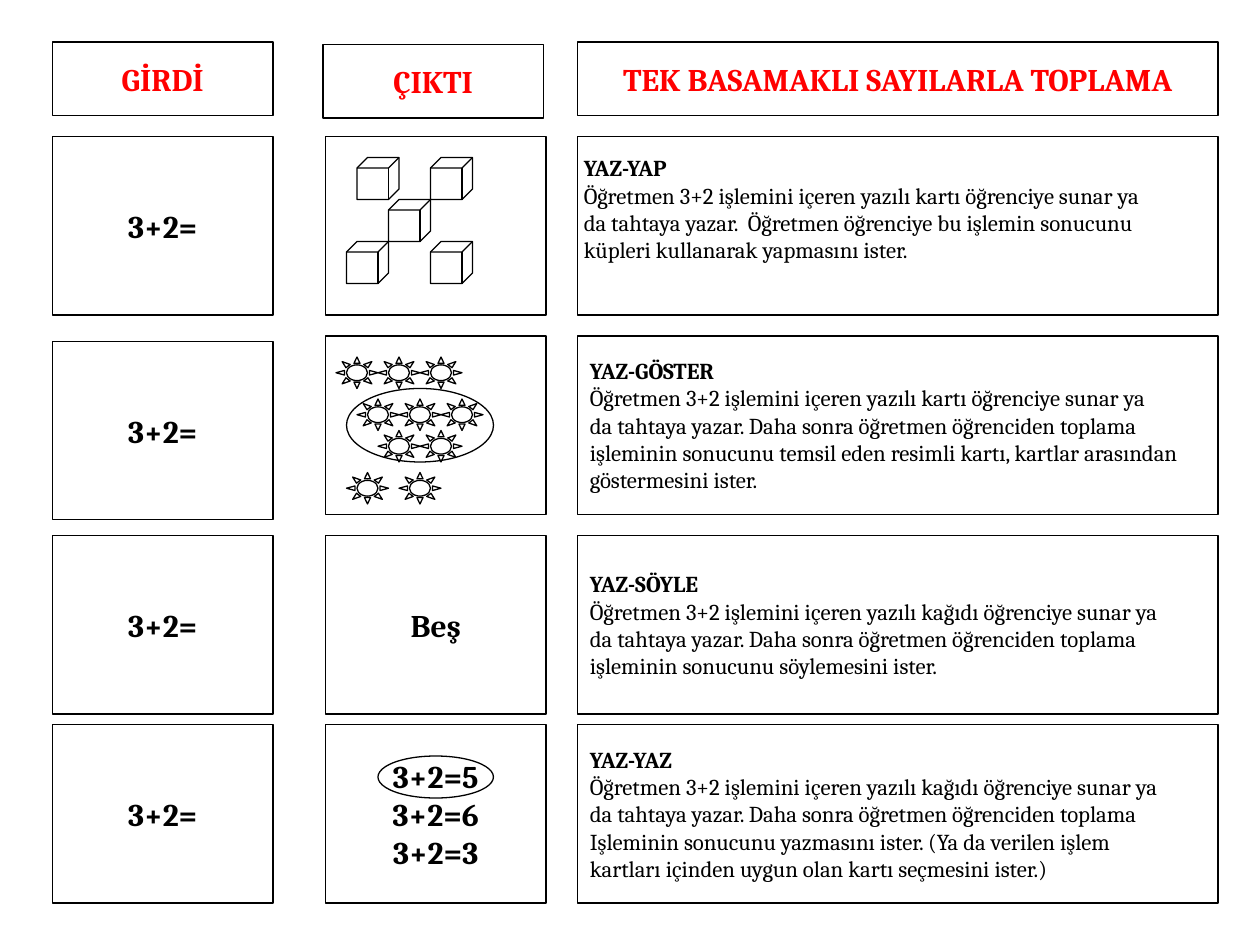
from pptx import Presentation
from pptx.dml.color import RGBColor
from pptx.enum.shapes import MSO_SHAPE
from pptx.enum.text import MSO_ANCHOR, MSO_AUTO_SIZE, PP_ALIGN
from pptx.util import Inches, Pt

RECT, OVAL = MSO_SHAPE.RECTANGLE, MSO_SHAPE.OVAL
CUBE, SUN = MSO_SHAPE.CUBE, MSO_SHAPE.SUN
TOP, MIDDLE = MSO_ANCHOR.TOP, MSO_ANCHOR.MIDDLE
LEFT, CENTER = PP_ALIGN.LEFT, PP_ALIGN.CENTER
TITLE_ONLY = 5
FONT, BLACK, RED = "Cambria", "000000", "FF0000"

GRID = Inches(1) / 12
INPUT_X, OUTPUT_X, TASK_X = 5, 31, 55
CARD_W, TASK_W = 21, 61
HEADER_Y, HEADER_H, CARD_H = 4, 7, 17
ROWS = [13, 32, 51, 69]
INPUT_ROWS = [13, 32.5, 51, 69]

CUBES = [(34, 15), (33, 23), (37, 19), (41, 15), (41, 23)]
SUNS = [(32, 34), (36, 34), (40, 34), (34, 38), (38, 38), (42, 38),
        (36, 41), (40, 41), (33, 45), (38, 45)]

TASKS = [
    ["YAZ-YAP",
     "Öğretmen 3+2 işlemini içeren yazılı kartı öğrenciye sunar ya",
     "da tahtaya yazar.  Öğretmen öğrenciye bu işlemin sonucunu",
     "küpleri kullanarak yapmasını ister."],
    ["YAZ-GÖSTER",
     "Öğretmen 3+2 işlemini içeren yazılı kartı öğrenciye sunar ya",
     "da tahtaya yazar. Daha sonra öğretmen öğrenciden toplama",
     "işleminin sonucunu temsil eden resimli kartı, kartlar arasından",
     "göstermesini ister."],
    ["YAZ-SÖYLE",
     "Öğretmen 3+2 işlemini içeren yazılı kağıdı öğrenciye sunar ya",
     "da tahtaya yazar. Daha sonra öğretmen öğrenciden toplama",
     "işleminin sonucunu söylemesini ister."],
    ["YAZ-YAZ",
     "Öğretmen 3+2 işlemini içeren yazılı kağıdı öğrenciye sunar ya",
     "da tahtaya yazar. Daha sonra öğretmen öğrenciden toplama",
     "Işleminin sonucunu yazmasını ister. (Ya da verilen işlem",
     "kartları içinden uygun olan kartı seçmesini ister.)"],
]
ANSWERS = [[], [], ["Beş"], ["3+2=5", "3+2=6", "3+2=3"]]


def color(value):
    """Turn a hex string into a colour."""
    return RGBColor.from_string(value)


def units(*lengths):
    """Turn grid units into slide lengths."""
    return [round(length * GRID) for length in lengths]


def outline(shape):
    """Give a shape a thin black line and no fill."""
    shape.fill.background()
    shape.line.color.rgb = color(BLACK)
    shape.line.width = Pt(0.75)


def add_outline(page, kind, x, y, width, height):
    """Add an outlined preset shape placed on the grid."""
    shape = page.shapes.add_shape(kind, *units(x, y, width, height))
    shape.shadow.inherit = False
    outline(shape)
    return shape


def write(box, lines, size=18, ink=BLACK, align=CENTER, anchor=MIDDLE, bold_lines=None):
    """Write lines as paragraphs, with the first bold_lines (or all) in bold."""
    frame = box.text_frame
    frame.word_wrap = True
    frame.auto_size = MSO_AUTO_SIZE.NONE
    frame.vertical_anchor = anchor
    for index, line in enumerate(lines):
        para = frame.paragraphs[0] if index == 0 else frame.add_paragraph()
        para.alignment = align
        span = para.add_run()
        span.text = line
        span.font.name = FONT
        span.font.size = Pt(size)
        span.font.bold = bold_lines is None or index < bold_lines
        span.font.color.rgb = color(ink)


def add_headers(page):
    """Format the title and add the two column headers."""
    title = page.shapes.title
    title.left, title.top, title.width, title.height = units(TASK_X, HEADER_Y, TASK_W, HEADER_H)
    outline(title)
    write(title, ["TEK BASAMAKLI SAYILARLA TOPLAMA"], ink=RED)
    for text, x, y in [("GİRDİ", INPUT_X, HEADER_Y), ("ÇIKTI", 30.75, 4.25)]:
        write(add_outline(page, RECT, x, y, CARD_W, HEADER_H), [text], ink=RED)


def add_task(page, y, lines):
    """Add a task description card."""
    return_box = add_outline(page, RECT, TASK_X, y, TASK_W, CARD_H)
    is_first = y == ROWS[0]
    write(return_box, lines, size=13, align=LEFT, bold_lines=1, anchor=TOP if is_first else MIDDLE)
    if is_first:
        return_box.text_frame.margin_left = Inches(0.05)
        return_box.text_frame.margin_top = Inches(0.14)


def add_drawings(page):
    """Add the cubes, the suns and the rings around the right answers."""
    for x, y in CUBES:
        add_outline(page, CUBE, x, y, 4, 4)
    for x, y in SUNS:
        add_outline(page, SUN, x, y, 4, 3)
    add_outline(page, OVAL, 33, 37, 14, 7)
    add_outline(page, OVAL, 36, 72, 11, 4)


def main():
    """Build the slide and save it."""
    deck = Presentation()
    deck.slide_width, deck.slide_height = Inches(10), Inches(7.5)
    page = deck.slides.add_slide(deck.slide_layouts[TITLE_ONLY])
    add_headers(page)
    for input_y, y, answer, task in zip(INPUT_ROWS, ROWS, ANSWERS, TASKS):
        write(add_outline(page, RECT, INPUT_X, input_y, CARD_W, CARD_H), ["3+2="])
        write(add_outline(page, RECT, OUTPUT_X, y, CARD_W, CARD_H), answer)
        add_task(page, y, task)
    add_drawings(page)
    deck.save("out.pptx")


if __name__ == "__main__":
    main()
